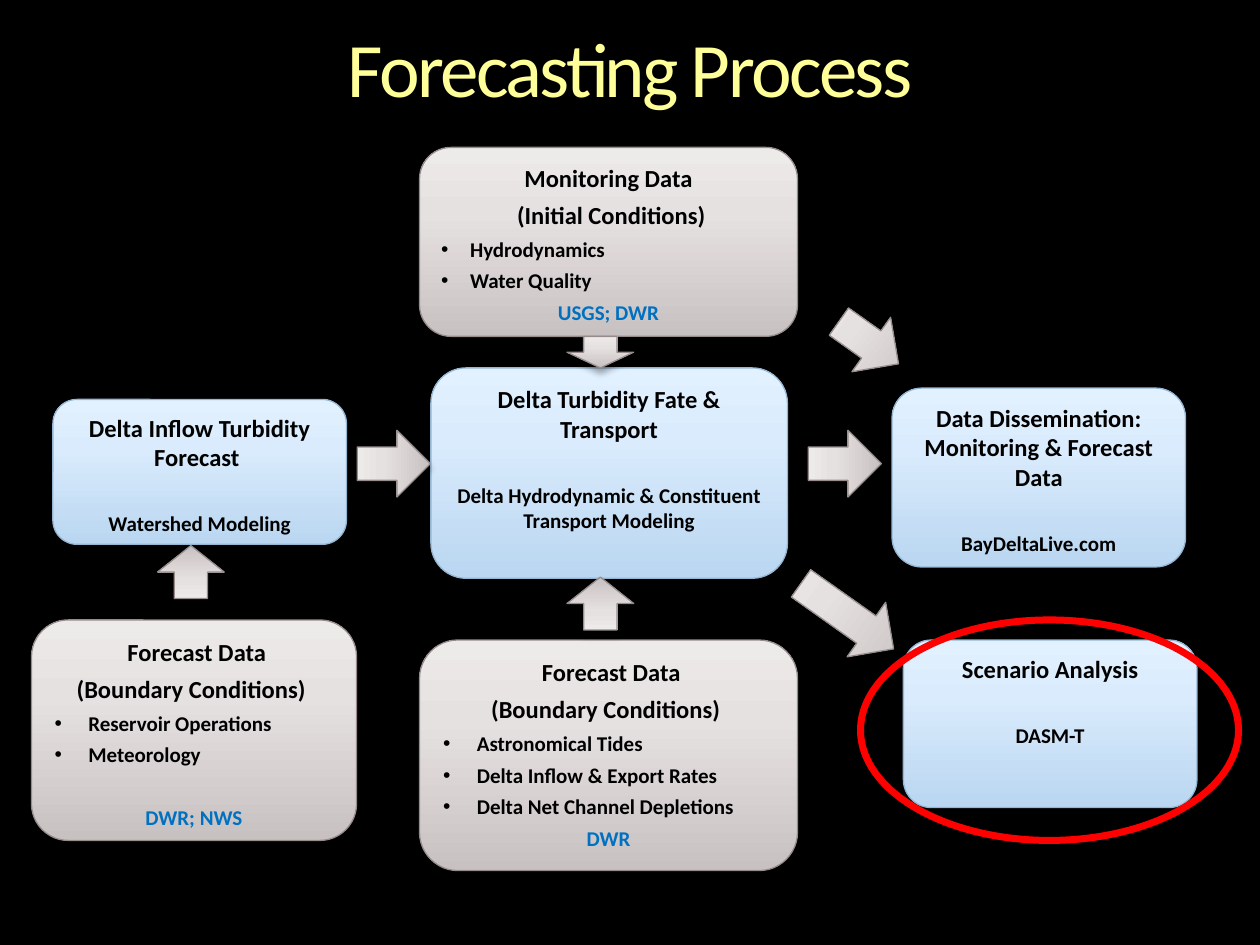
from lxml import etree
from pptx import Presentation
from pptx.dml.color import RGBColor
from pptx.enum.shapes import MSO_SHAPE
from pptx.enum.text import MSO_ANCHOR, PP_ALIGN
from pptx.oxml.ns import qn
from pptx.util import Inches, Pt

ROUNDED = MSO_SHAPE.ROUNDED_RECTANGLE
DOWN_ARROW = MSO_SHAPE.DOWN_ARROW
OVAL = MSO_SHAPE.OVAL
TOP = MSO_ANCHOR.TOP
CENTER, LEFT = PP_ALIGN.CENTER, PP_ALIGN.LEFT

COLORS = {
    "background": "000000",
    "title": "FFFF99",
    "text": "000000",
    "source": "0070C0",
    "highlight": "FF0000",
    "shadow": "000000",
    "data_line": "968C8C",
    "model_line": "94B6D2",
}
GRADIENTS = {
    "data": [(0, "C8C1C1"), (65, "E6E1E1"), (100, "EDEAEA")],
    "model": [(0, "BAD6F1"), (65, "D9EBFC"), (100, "E2F1FF")],
}
FONT = "Calibri"
HEADING, DETAIL = 14, 12
GAP = 18  # points left free above a closing line


def rgb(name):
    return RGBColor.from_string(COLORS[name])


class Diagram:
    def __init__(self, page):
        self.page = page
        page.background.fill.solid()
        page.background.fill.fore_color.rgb = rgb("background")

    def span(self, para, text, size, color, bold=True):
        span = para.add_run()
        span.text = text
        span.font.name, span.font.size, span.font.bold = FONT, Pt(size), bold
        span.font.color.rgb = rgb(color)
        return span

    def title(self, text):
        box = self.page.shapes.add_textbox(0, Inches(0.25), Inches(10), Inches(0.67))
        frame = box.text_frame
        frame.word_wrap = True
        frame.margin_left = frame.margin_right = frame.margin_top = frame.margin_bottom = 0
        para = frame.paragraphs[0]
        para.alignment, para.line_spacing = CENTER, 0.9
        span = self.span(para, text, 44, "title", bold=False)
        span.font._element.set("spc", "-150")

    def shape(self, kind, place, theme):
        """Add a preset shape with the theme's upward gradient, outline and soft shadow."""
        shape = self.page.shapes.add_shape(kind, *map(Inches, place))
        shape.fill.gradient()
        shape.fill.gradient_angle = 90
        properties = shape._element.spPr
        stops = properties.find(qn("a:gradFill")).find(qn("a:gsLst"))
        stops.clear()
        for position, color in GRADIENTS[theme]:
            stop = etree.SubElement(stops, qn("a:gs"), pos=str(position * 1000))
            etree.SubElement(stop, qn("a:srgbClr"), val=color)
        shape.line.color.rgb = rgb(theme + "_line")
        shape.line.width = Pt(0.75)
        shape.shadow.inherit = False
        shadow = etree.SubElement(
            properties.find(qn("a:effectLst")), qn("a:outerShdw"),
            blurRad=str(Pt(4)), dist=str(Pt(3)), dir="5400000", rotWithShape="0")
        color = etree.SubElement(shadow, qn("a:srgbClr"), val=COLORS["shadow"])
        etree.SubElement(color, qn("a:alpha"), val="35000")
        return shape

    def box(self, place, theme, headings, bullets=(), closing="", gap=0):
        """Add a rounded box: centred headings, a bullet list and a closing line."""
        frame = self.shape(ROUNDED, place, theme).text_frame
        frame.word_wrap, frame.vertical_anchor = True, TOP
        closing_color = "source" if theme == "data" else "text"
        lines = [(text, HEADING, "text", False) for text in headings]
        lines += [(text, DETAIL, "text", True) for text in bullets]
        lines.append((closing, DETAIL, closing_color, False))
        for index, (text, size, color, bulleted) in enumerate(lines):
            para = frame.add_paragraph() if index else frame.paragraphs[0]
            para.alignment = LEFT if bulleted else CENTER
            para.space_after = Pt(0.3 * size)
            if bulleted:
                self.bullet(para)
            self.span(para, text, size, color)
        para.space_before = Pt(gap)

    def bullet(self, para):
        properties = para._p.get_or_add_pPr()
        indent = Inches(0.23)
        properties.set("marL", str(indent))
        properties.set("indent", str(-indent))
        etree.SubElement(properties, qn("a:buFont"), typeface="Arial")
        etree.SubElement(properties, qn("a:buChar"), char="•")

    def arrow(self, left, top, length, rotation):
        self.shape(DOWN_ARROW, (left, top, 0.53, length), "data").rotation = rotation

    def ring(self, place):
        ring = self.page.shapes.add_shape(OVAL, *map(Inches, place))
        ring.shadow.inherit = False
        ring.fill.background()
        ring.line.color.rgb = rgb("highlight")
        ring.line.width = Pt(4)


DATA_BOXES = [
    ((3.33, 1.17, 3, 1.5), ["Monitoring Data", " (Initial Conditions)"],
     ["Hydrodynamics", "Water Quality"], "USGS; DWR", 0),
    ((3.33, 5.08, 3, 1.83), [" Forecast Data", "(Boundary Conditions) "],
     [" Astronomical Tides", " Delta Inflow & Export Rates",
      " Delta Net Channel Depletions"], "DWR", 0),
    ((0.25, 4.92, 2.58, 1.75), [" Forecast Data", "(Boundary Conditions) "],
     [" Reservoir Operations", " Meteorology"], "DWR; NWS", GAP),
]
MODEL_BOXES = [
    ((0.42, 3.17, 2.33, 1.15), "Delta Inflow Turbidity Forecast ", "Watershed Modeling"),
    ((3.42, 2.92, 2.83, 1.67), "Delta Turbidity Fate & Transport",
     "Delta Hydrodynamic & Constituent Transport Modeling"),
    ((7.08, 3.08, 2.33, 1.42), "Data Dissemination: Monitoring & Forecast Data",
     "BayDeltaLive.com"),
    ((7.17, 5.08, 2.33, 1.33), "Scenario Analysis", "DASM-T"),
]
UP, RIGHT, SLANTED = 180, 270, 305.3
ARROWS = [
    (4.5, 2.67, 0.25, 0),
    (4.5, 4.58, 0.42, UP),
    (1.25, 4.33, 0.42, UP),
    (2.86, 3.39, 0.58, RIGHT),
    (6.44, 3.39, 0.58, RIGHT),
    (6.63, 2.43, 0.58, SLANTED),
    (6.46, 4.44, 0.9, SLANTED),
]


def main():
    deck = Presentation()
    deck.slide_width, deck.slide_height = Inches(10), Inches(7.5)
    diagram = Diagram(deck.slides.add_slide(deck.slide_layouts[6]))
    diagram.title("Forecasting Process")
    for place, headings, bullets, source, gap in DATA_BOXES:
        diagram.box(place, "data", headings, bullets, source, gap)
    for place, heading, method in MODEL_BOXES:
        diagram.box(place, "model", [heading], closing=method, gap=GAP)
    for arrow in ARROWS:
        diagram.arrow(*arrow)
    diagram.ring((6.83, 4.92, 3, 1.75))
    deck.save("out.pptx")


if __name__ == "__main__":
    main()
